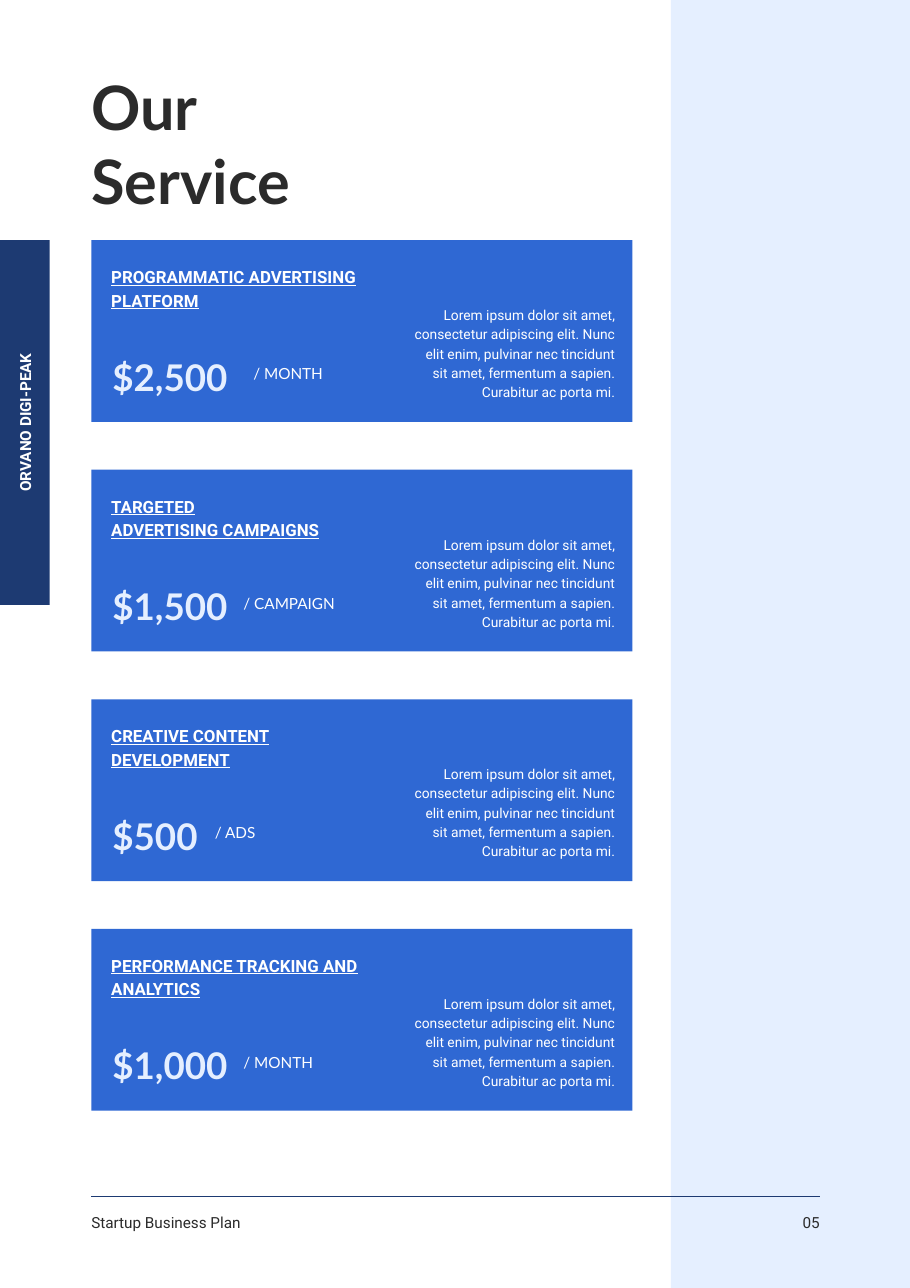
from pptx import Presentation
from pptx.dml.color import RGBColor
from pptx.enum.shapes import MSO_CONNECTOR, MSO_SHAPE
from pptx.enum.text import MSO_AUTO_SIZE, PP_ALIGN
from pptx.util import Inches, Pt
from lxml import etree

RECT = MSO_SHAPE.RECTANGLE
STRAIGHT = MSO_CONNECTOR.STRAIGHT
GROW = MSO_AUTO_SIZE.SHAPE_TO_FIT_TEXT
LEFT, MID, RIGHT = PP_ALIGN.LEFT, PP_ALIGN.CENTER, PP_ALIGN.RIGHT

TITLE = ["Our", "Service"]
BRAND = ["ORVANO DIGI-PEAK"]
FOOTER = ["Startup Business Plan"]
PAGE = ["05"]
BLURB = [
    "Lorem ipsum dolor sit amet, consectetur adipiscing elit. Nunc",
    "elit enim, pulvinar nec tincidunt",
    "sit amet, fermentum a sapien. Curabitur ac porta mi.",
]
# heading, price, unit, left edge of unit
CARDS = [
    (["PROGRAMMATIC ADVERTISING PLATFORM"], "$2,500", "/ MONTH", 2.3),
    (["TARGETED", "ADVERTISING CAMPAIGNS"], "$1,500", "/ CAMPAIGN", 2.21),
    (["CREATIVE CONTENT DEVELOPMENT"], "$500", "/ ADS", 1.95),
    (["PERFORMANCE TRACKING AND ANALYTICS"], "$1,000", "/ MONTH", 2.21),
]

COLORS = {"ink": "2B2B2B", "navy": "1D3A72", "blue": "2F68D3",
          "pale": "E5EFFF", "white": "FFFFFF"}

# font, colour, alignment, line spacing in points
STYLES = {
    "title": ({"name": "Lato", "size": Pt(40), "bold": True}, "ink", LEFT, 48),
    "brand": ({"name": "Roboto", "size": Pt(10), "bold": True}, "white", MID, 14),
    "foot": ({"name": "Roboto", "size": Pt(10)}, "ink", LEFT, 14),
    "page": ({"name": "Roboto", "size": Pt(10)}, "ink", RIGHT, 14),
    "head": ({"name": "Roboto", "size": Pt(11), "bold": True,
              "underline": True}, "white", LEFT, 15.4),
    "price": ({"name": "Lato", "size": Pt(24), "bold": True}, "pale", LEFT, 33.6),
    "unit": ({"name": "Lato", "size": Pt(10)}, "white", LEFT, 14),
    "blurb": ({"name": "Roboto", "size": Pt(9)}, "white", RIGHT, 12.6),
}

WIDTH, HEIGHT = 8.26, 11.69
EDGE, END = 0.83, 7.44
TOP, CARD_W, CARD_H = 2.18, 4.91, 1.65
PITCH = 6.25 / 3
PANEL_X = 6.09
RULE_Y, FOOT_Y, FOOT_W = 10.86, 10.98, 2.04


def color(name):
    return RGBColor.from_string(COLORS[name])


def add_block(slide, x, y, w, h, fill):
    block = slide.shapes.add_shape(RECT, *map(Inches, (x, y, w, h)))
    block.shadow.inherit = False
    block.fill.solid()
    block.fill.fore_color.rgb = color(fill)
    block.line.fill.background()


def add_text(slide, x, y, w, h, lines, style, turn=0):
    font, tint, align, gap = STYLES[style]
    box = slide.shapes.add_textbox(*map(Inches, (x, y, w, h)))
    box.rotation = turn
    frame = box.text_frame
    frame.word_wrap = True
    frame.auto_size = GROW
    for side in ("left", "top", "right", "bottom"):
        setattr(frame, "margin_" + side, 0)
    for i, line in enumerate(lines):
        para = frame.paragraphs[0] if i == 0 else frame.add_paragraph()
        para.alignment = align
        para.line_spacing = Pt(gap)
        run = para.add_run()
        run.text = line
        for key, value in font.items():
            setattr(run.font, key, value)
        run.font.color.rgb = color(tint)


def add_rule(slide, x1, x2, y):
    rule = slide.shapes.add_connector(STRAIGHT, *map(Inches, (x1, y, x2, y)))
    rule.line.color.rgb = color("navy")
    rule.line.width = Pt(0.75)
    props = rule.line._get_or_add_ln().getparent()
    etree.SubElement(
        props, "{http://schemas.openxmlformats.org/drawingml/2006/main}effectLst")


def add_card(slide, y, head, price, unit, unit_x):
    add_block(slide, EDGE, y, CARD_W, CARD_H, "blue")
    add_text(slide, 1.01, y + 0.21, 2.27, 0.42, head, "head")
    add_text(slide, 1.02, y + 0.97, 2.2, 0.43, [price], "price")
    add_text(slide, unit_x, y + 1.1, 1.09, 0.19, [unit], "unit")
    add_text(slide, 3.39, y + 0.58, 2.19, 0.83, BLURB, "blurb")


def main():
    deck = Presentation()
    deck.slide_width, deck.slide_height = Inches(WIDTH), Inches(HEIGHT)
    slide = deck.slides.add_slide(deck.slide_layouts[6])

    add_block(slide, PANEL_X, 0, WIDTH - PANEL_X, HEIGHT, "pale")
    add_rule(slide, EDGE, END, RULE_Y)
    add_block(slide, 0, TOP, 0.45, 3.31, "navy")
    add_text(slide, EDGE, FOOT_Y, FOOT_W, 0.19, FOOTER, "foot")
    add_text(slide, END - FOOT_W, FOOT_Y, FOOT_W, 0.19, PAGE, "page")
    add_text(slide, EDGE, 0.63, CARD_W, 1.33, TITLE, "title")
    add_text(slide, -1.2, 3.74, 2.82, 0.19, BRAND, "brand", 270)
    for i, card in enumerate(CARDS):
        add_card(slide, TOP + i * PITCH, *card)

    deck.save("out.pptx")


if __name__ == "__main__":
    main()
